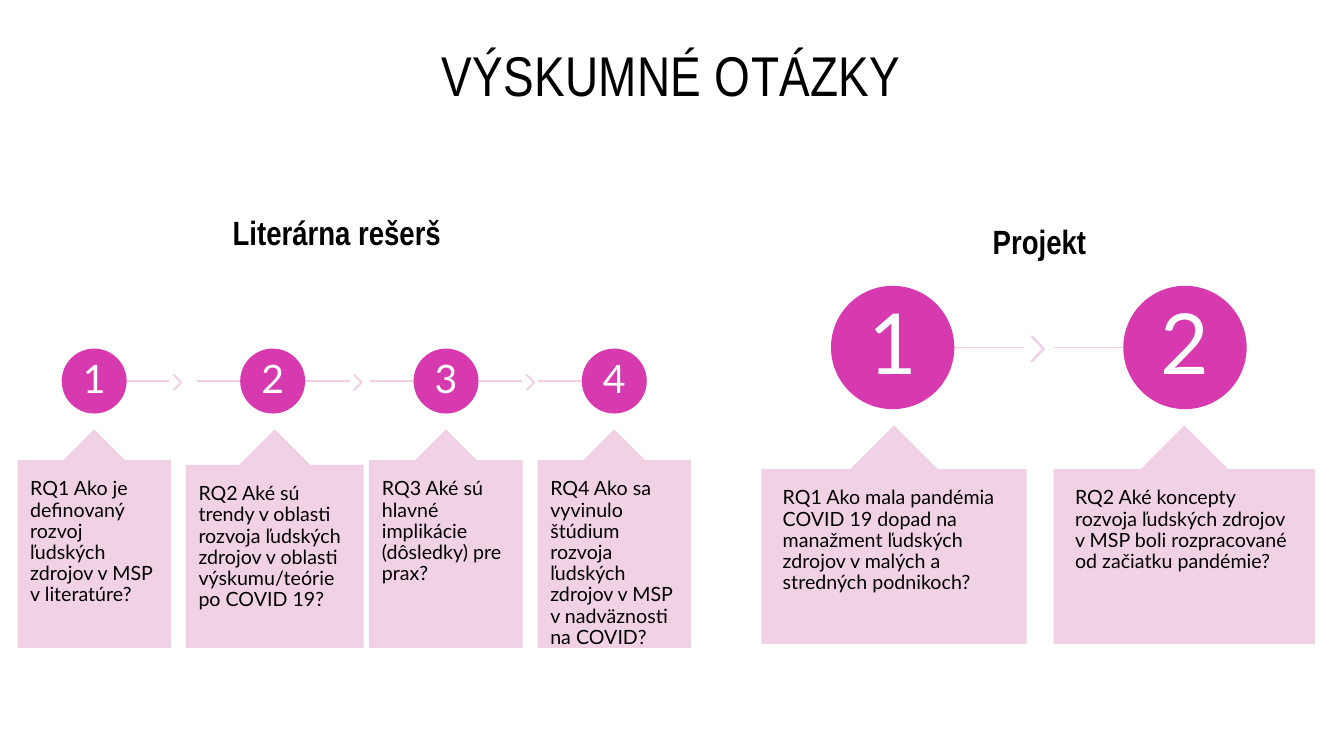
from dataclasses import dataclass

from lxml.etree import SubElement
from pptx import Presentation
from pptx.dml.color import RGBColor as RGB
from pptx.enum.shapes import MSO_CONNECTOR as LINE, MSO_SHAPE as SHAPE
from pptx.enum.text import MSO_ANCHOR as ANCHOR, PP_ALIGN as ALIGN
from pptx.oxml.ns import qn
from pptx.util import Pt


@dataclass
class Theme:
    black: RGB = RGB(0, 0, 0)
    white: RGB = RGB(255, 255, 255)
    pink: RGB = RGB(0xF0, 0xCE, 0xE3)
    magenta: RGB = RGB(0xD7, 0x39, 0xAE)
    head: str = "Arial Narrow"
    body: str = "Lato"
    title: int = 40
    label: int = 24
    text: int = 14
    small: int = 28
    large: int = 60


theme = Theme()
deck = Presentation()
deck.slide_width, deck.slide_height = Pt(960), Pt(540)
slide = deck.slides.add_slide(deck.slide_layouts[6])
shapes = slide.shapes


def write(shape, text, size, font, color, anchor, align, pad, space):
    """Fill a shape with one paragraph; pad is (across, down)."""
    frame = shape.text_frame
    frame.word_wrap = True
    frame.vertical_anchor = anchor
    frame.margin_left = frame.margin_right = Pt(pad[0])
    frame.margin_top = frame.margin_bottom = Pt(pad[1])
    para = frame.paragraphs[0]
    para.text = text
    para.alignment = align
    para.line_spacing = space
    para.font.size = Pt(size)
    para.font.name = font
    para.font.color.rgb = color
    return para


def draw(kind, box, color, alpha=100):
    shape = shapes.add_shape(kind, *map(Pt, box))
    shape.shadow.inherit = False
    shape.fill.solid()
    shape.fill.fore_color.rgb = shape.line.color.rgb = color
    shape.line.width = Pt(1)
    if alpha < 100:
        for tint in shape._element.spPr.iter(qn("a:srgbClr")):
            SubElement(tint, qn("a:alpha"), val=str(alpha * 1000))
    return shape


# Title and the two headings
title = shapes.add_textbox(Pt(61.2), Pt(23), Pt(836.6), Pt(59.8))
para = write(title, "VÝSKUMNÉ OTÁZKY", theme.title, theme.head, theme.black,
             ANCHOR.MIDDLE, ALIGN.CENTER, (7.2, 3.6), 1.0)
para.runs[0]._r.get_or_add_rPr().set("spc", "30")

for name, left, top, width in (("Literárna rešerš", 159.1, 131.8, 416.2),
                               ("Projekt", 702, 138.2, 239)):
    label = shapes.add_textbox(Pt(left), Pt(top), Pt(width), Pt(51.8))
    para = write(label, name, theme.label, theme.head, theme.black,
                 ANCHOR.BOTTOM, ALIGN.LEFT, (7.2, 3.6), 1.2)
    para.font.bold = True

# Each step: box left, box width, circle middle, line start, line end, question
review = [
    (13, 108.7, 67.3, 67.3, 121,
     "RQ1 Ako je definovaný rozvoj ľudských zdrojov v MSP v literatúre?"),
    (133.2, 126, 194.8, 140.4, 249.8,
     "RQ2 Aké sú trendy v oblasti rozvoja ľudských zdrojov v oblasti "
     "výskumu/teórie po COVID 19?"),
    (264.2, 108.7, 318.6, 264.2, 373,
     "RQ3 Aké sú hlavné implikácie (dôsledky) pre prax?"),
    (384.5, 108.7, 438.8, 384.5, 438.8,
     "RQ4 Ako sa vyvinulo štúdium rozvoja ľudských zdrojov v MSP "
     "v nadväznosti na COVID?"),
]
project = [
    (544.3, 188.6, 637.6, 637.6, 731.5,
     "RQ1 Ako mala pandémia COVID 19 dopad na manažment ľudských zdrojov "
     "v malých a stredných podnikoch?"),
    (753.1, 185.8, 846.4, 753.1, 846.4,
     "RQ2 Aké koncepty rozvoja ľudských zdrojov v MSP boli rozpracované "
     "od začiatku pandémie?"),
]

# Each flow: steps, line height, circle size, digit size, box top,
# side padding, chevron gap, width and height
flows = [
    (review, 272.2, 45.4, theme.small, 307.4, 8.6, 2.9, 5.8, 10.8),
    (project, 248.2, 87.1, theme.large, 304.6, 14.8, 5, 9.4, 18),
]
for steps, axis, disc, size, top, side, gap, wide, high in flows:
    for num, (left, width, mid, start, end, ask) in enumerate(steps, 1):
        line = shapes.add_connector(LINE.STRAIGHT, Pt(start), Pt(axis),
                                    Pt(end), Pt(axis))
        line.line.color.rgb = theme.pink
        line.line.width = Pt(1)
        SubElement(line._element.spPr, qn("a:effectLst"))

        if num < len(steps):
            mark = draw(SHAPE.CHEVRON, (end + gap, axis + 1 - high / 2, wide, high),
                        theme.pink, 90)
            mark.adjustments[0] = 0.9

        ball = draw(SHAPE.OVAL, (mid - disc / 2, axis - disc / 2, disc, disc),
                    theme.magenta)
        write(ball, str(num), size, theme.body, theme.white,
              ANCHOR.MIDDLE, ALIGN.CENTER, (1.5, 1.5), 0.9)

        card = draw(SHAPE.UP_ARROW_CALLOUT, (left, top, width, 154.8),
                    theme.pink, 90)
        for spot, value in enumerate((0.5, 0.2, 0.2, 1)):
            card.adjustments[spot] = value
        write(card, ask, theme.text, theme.body, theme.black,
              ANCHOR.TOP, ALIGN.LEFT, (side, 13), 0.9)

deck.save("out.pptx")
